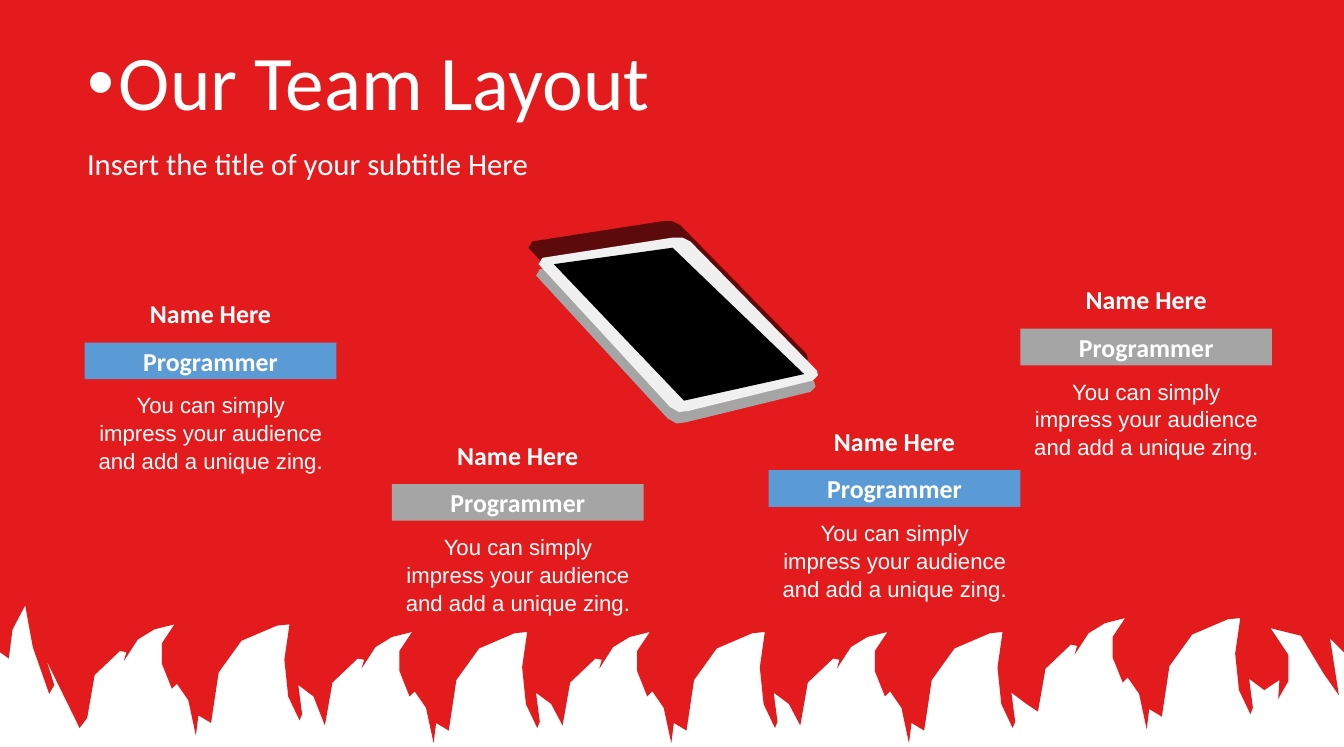
from lxml.etree import SubElement
from pptx import Presentation
from pptx.dml.color import RGBColor
from pptx.enum.shapes import MSO_SHAPE
from pptx.enum.text import MSO_ANCHOR, MSO_AUTO_SIZE, PP_ALIGN
from pptx.oxml.ns import qn
from pptx.util import Inches, Pt

RED = RGBColor(0xE4, 0x1B, 0x1C)
WHITE = RGBColor(0xFF, 0xFF, 0xFF)
BLUE = RGBColor(0x5B, 0x9B, 0xD5)
GRAY = RGBColor(0xA5, 0xA5, 0xA5)
BLACK = RGBColor(0, 0, 0)
SHADE = RGBColor(0x5C, 0x0A, 0x0B)
RIM = RGBColor(0xF0, 0xF0, 0xF0)

WIDTH, HEIGHT = 10.63, 5.91

# One small and one big flame, measured from the tip of the small one
FLAME_PAIR = [
    (-0.69, 0.74), (-0.63, 0.4), (-0.43, 0.21), (-0.38, 0.22), (-0.4, 0.29),
    (-0.29, 0.12), (-0.16, 0.04), (0, 0), (-0.1, 0.15), (-0.1, 0.31), (-0.02, 0.51),
    (0.02, 0.47), (0.11, 0.6), (0.17, 0.88), (0.19, 0.72), (0.29, 0.78),
    (0.35, 0.38), (0.53, 0.13), (0.81, 0.01), (0.91, 0), (0.87, 0.28), (0.9, 0.57),
    (0.99, 0.76), (1.01, 0.71), (0.98, 0.48), (1.1, 0.57),
]
FIRST_TIP, PAIR_PITCH = 1.38, 1.88
TIP_TOPS = [4.94, 5, 5, 5, 4.89]
LEFT_FLAMES = [(0, 5.16), (0.07, 5.21), (0.1, 4.98), (0.2, 4.79), (0.26, 5.12),
               (0.39, 5.49), (0.43, 5.42), (0.37, 5.23), (0.63, 5.76)]
RIGHT_FLAMES = [(10.12, 5.38), (10.11, 5.53), (10.19, 5.39), (10.19, 5.18), (10.05, 4.97),
                (10.29, 5.03), (10.47, 5.33), (10.59, 5.5), (10.52, 5.05), (WIDTH, 5.16)]

TABLET_RIM = [(4.26, 2.09), (4.29, 2.04), (5.32, 1.88), (5.4, 1.88), (5.46, 1.91),
              (6.46, 2.93), (6.47, 2.97), (6.43, 3.01), (5.45, 3.25), (5.37, 3.26),
              (5.3, 3.22)]
TABLET_SCREEN = [(4.38, 2.09), (5.41, 3.17), (6.36, 2.96), (5.32, 1.96)]

# Left, top and label colour of each member
MEMBERS = [(0.67, 2.34, BLUE), (8.07, 2.23, GRAY), (6.08, 3.35, BLUE), (3.1, 3.46, GRAY)]
BLURB = "You can simply impress your audience and add a unique zing."


def paint(shape, color):
    shape.shadow.inherit = False
    shape.fill.solid()
    shape.fill.fore_color.rgb = color
    shape.line.fill.background()


def shift(points, dx, dy):
    return [(x + dx, y + dy) for x, y in points]


def add_outline(s, points, color):
    corners = [(Inches(x), Inches(y)) for x, y in points]
    builder = s.shapes.build_freeform(*corners[0])
    builder.add_line_segments(corners[1:])
    paint(builder.convert_to_shape(), color)


def add_field(s):
    edge = list(LEFT_FLAMES)
    for i, top in enumerate(TIP_TOPS):
        edge += shift(FLAME_PAIR, FIRST_TIP + i * PAIR_PITCH, top)
    add_outline(s, edge + RIGHT_FLAMES + [(WIDTH, 0), (0, 0)], RED)


def add_tablet(s):
    add_outline(s, shift(TABLET_RIM, -0.08, -0.13), SHADE)
    add_outline(s, shift(TABLET_RIM, -0.02, 0.09), GRAY)
    add_outline(s, TABLET_RIM, RIM)
    add_outline(s, TABLET_SCREEN, BLACK)


def write(shape, text, size, font="Calibri", bold=False, align=PP_ALIGN.CENTER,
          anchor=MSO_ANCHOR.MIDDLE, spacing=1.0):
    tf = shape.text_frame
    tf.word_wrap = True
    tf.auto_size = MSO_AUTO_SIZE.NONE
    tf.vertical_anchor = anchor
    p = tf.paragraphs[0]
    p.text = text
    p.alignment = align
    p.line_spacing = spacing
    r = p.runs[0]
    r.font.size, r.font.name, r.font.bold = Pt(size), font, bold
    r.font.color.rgb = WHITE
    return p


def add_text(s, x, y, w, h, text, size, **style):
    box = s.shapes.add_textbox(Inches(x), Inches(y), Inches(w), Inches(h))
    write(box, text, size, **style)
    return box


def add_title(s, text):
    title = s.shapes.title
    title.left, title.top = Inches(0.59), Inches(0.3)
    title.width, title.height = Inches(10.04), Inches(0.66)
    p = write(title, text, 44, align=PP_ALIGN.LEFT, anchor=MSO_ANCHOR.TOP, spacing=0.9)
    # Hanging bullet
    pPr = p._p.get_or_add_pPr()
    pPr.set("marL", str(Inches(0.25)))
    pPr.set("indent", str(-Inches(0.25)))
    SubElement(pPr, qn("a:buFont")).set("typeface", "Arial")
    SubElement(pPr, qn("a:buChar")).set("char", "•")


def add_member(s, x, y, color):
    add_text(s, x, y, 1.99, 0.28, "Name Here", 14.7, bold=True)
    label = s.shapes.add_shape(MSO_SHAPE.RECTANGLE, Inches(x), Inches(y + 0.37),
                               Inches(1.99), Inches(0.29))
    paint(label, color)
    write(label, "Programmer", 14.7, bold=True)
    blurb = add_text(s, x, y + 0.75, 1.99, 0.74, BLURB, 12.6, font="Arial",
                     anchor=MSO_ANCHOR.TOP, spacing=1.05)
    blurb.text_frame.margin_top = 0


def main():
    prs = Presentation()
    prs.slide_width, prs.slide_height = Inches(WIDTH), Inches(HEIGHT)
    s = prs.slides.add_slide(prs.slide_layouts[5])

    # Red field above white flames, with the title in front of it
    add_field(s)
    s.shapes._spTree.append(s.shapes.title._element)

    # Heading
    add_title(s, "Our Team Layout")
    add_text(s, 0.59, 1.18, 10.04, 0.33, "Insert the title of your subtitle Here", 17.5,
             align=PP_ALIGN.LEFT, anchor=MSO_ANCHOR.TOP, spacing=0.7)

    # Team
    for x, y, color in MEMBERS:
        add_member(s, x, y, color)

    # Tablet
    add_tablet(s)

    prs.save("out.pptx")


if __name__ == "__main__":
    main()
